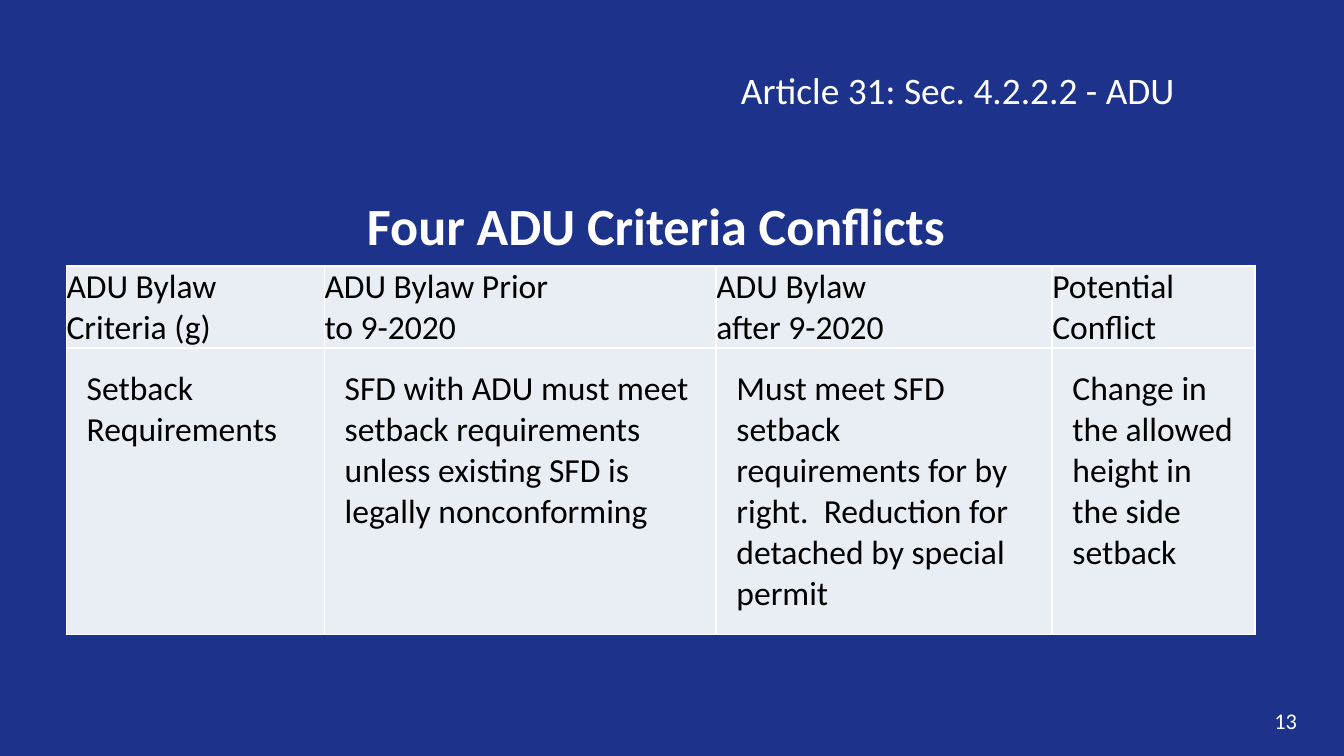
import pptx
import pptx.dml.color
import pptx.enum.text
import pptx.oxml
import pptx.oxml.ns
import pptx.util

PX = 4572  # EMU per px, 200 px to the inch
FONT = "Calibri"
COLORS = {"back": "1D328B", "light": "FFFFFF", "dark": "000000", "cell": "E9EDF4"}
ALIGN = pptx.enum.text.PP_ALIGN
ANCHOR = pptx.enum.text.MSO_ANCHOR

COLUMNS = [384, 583, 500, 302]
ROWS = [122, 426]
PADDING = [0, 30]
CELLS = [
    ["ADU Bylaw Criteria (g)", "ADU Bylaw Prior\nto 9-2020",
     "ADU Bylaw\nafter 9-2020", "Potential Conflict"],
    ["Setback Requirements",
     "SFD with ADU must meet setback requirements unless existing SFD is "
     "legally nonconforming",
     "Must meet SFD setback requirements for by right.  Reduction for "
     "detached by special permit",
     "Change in the allowed height in the side setback"],
]


def rgb(name):
    return pptx.dml.color.RGBColor.from_string(COLORS[name])


def format_text(tf, size, color, align=ALIGN.LEFT, bold=False):
    for p in tf.paragraphs:
        p.alignment = align
        for r in p.runs:
            r.font.name = FONT
            r.font.size = pptx.util.Pt(size)
            r.font.bold = bold
            r.font.color.rgb = rgb(color)


def add_label(s, box, text, size, align=ALIGN.LEFT, anchor=ANCHOR.TOP,
              bold=False, wrap=True):
    sp = s.shapes.add_textbox(*[n * PX for n in box])
    tf = sp.text_frame
    tf.word_wrap = wrap
    tf.vertical_anchor = anchor
    tf.text = text
    format_text(tf, size, "light", align, bold)


def add_borders(cell):
    tcPr = cell._tc.get_or_add_tcPr()
    for i, side in enumerate(["lnL", "lnR", "lnT", "lnB"]):
        tcPr.insert(i, pptx.oxml.parse_xml(
            f'<a:{side} {pptx.oxml.ns.nsdecls("a")} w="12700"><a:solidFill>'
            f'<a:srgbClr val="{COLORS["light"]}"/></a:solidFill></a:{side}>'))


def add_criteria_table(s, box):
    table = s.shapes.add_table(len(ROWS), len(COLUMNS),
                               *[n * PX for n in box]).table
    table.first_row = False
    table.horz_banding = False
    for column, width in zip(table.columns, COLUMNS):
        column.width = width * PX
    for i, height in enumerate(ROWS):
        table.rows[i].height = height * PX
        for j, text in enumerate(CELLS[i]):
            cell = table.cell(i, j)
            cell.text_frame.text = text
            format_text(cell.text_frame, 18, "dark")
            pad = PADDING[i] * PX
            cell.margin_left = cell.margin_right = pad
            cell.margin_top = cell.margin_bottom = pad
            cell.fill.solid()
            cell.fill.fore_color.rgb = rgb("cell")
            add_borders(cell)


def add_conflicts_slide(prs):
    s = prs.slides.add_slide(prs.slide_layouts[6])
    s.background.fill.solid()
    s.background.fill.fore_color.rgb = rgb("back")

    # Title
    add_label(s, (76, 240, 1800, 188), "Four ADU Criteria Conflicts", 28,
              ALIGN.CENTER, ANCHOR.MIDDLE, bold=True)
    # Slide number
    add_label(s, (1876, 1043, 74, 60), "13", 12, ALIGN.RIGHT, ANCHOR.MIDDLE,
              wrap=False)
    # Criteria table
    add_criteria_table(s, (99, 396, sum(COLUMNS), sum(ROWS)))
    # Article reference
    add_label(s, (1083, 90, 816, 88), "Article 31: Sec. 4.2.2.2 - ADU", 20)


def main():
    prs = pptx.Presentation()
    prs.slide_width = 2000 * PX
    prs.slide_height = 1125 * PX
    add_conflicts_slide(prs)
    prs.save("out.pptx")


if __name__ == "__main__":
    main()
